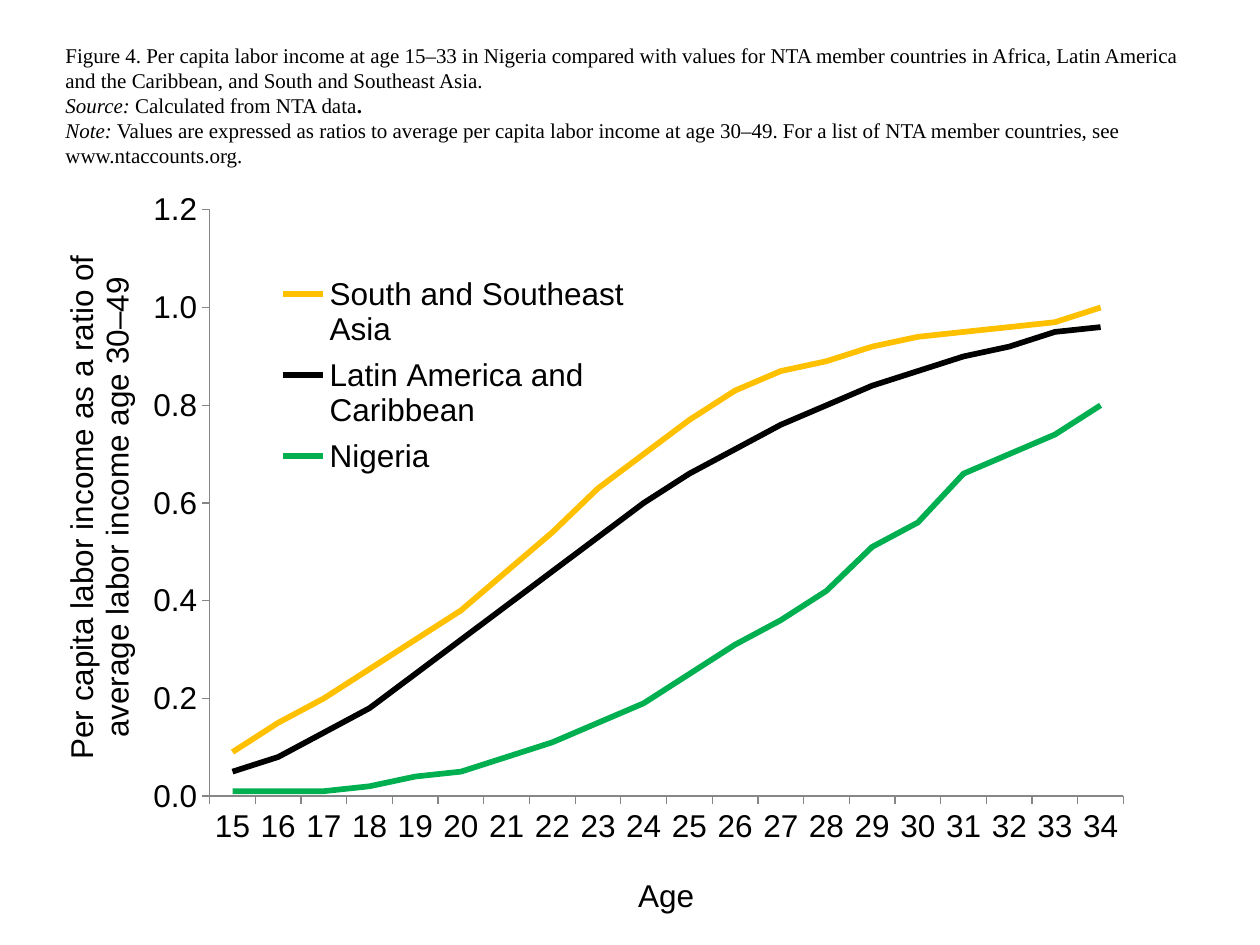
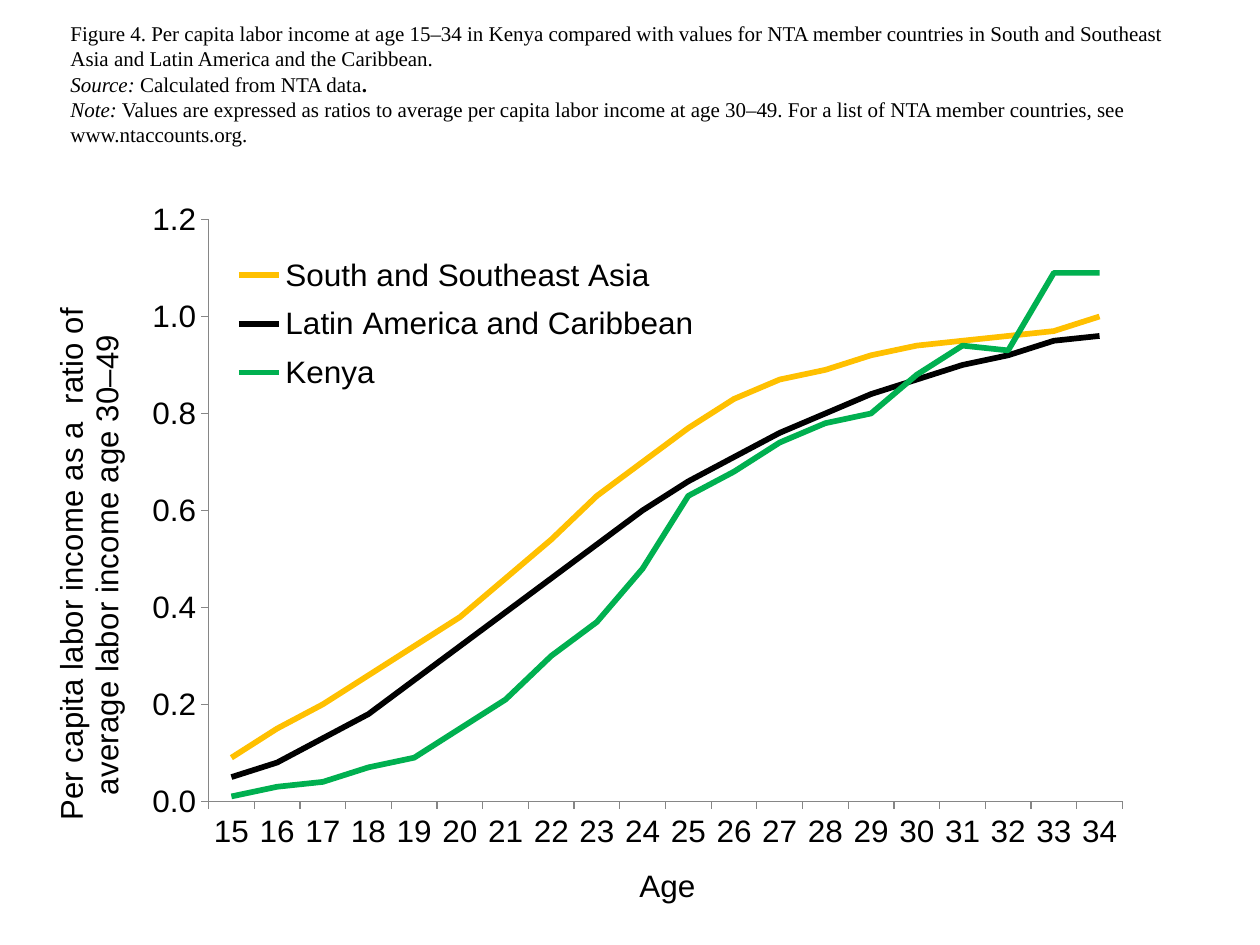
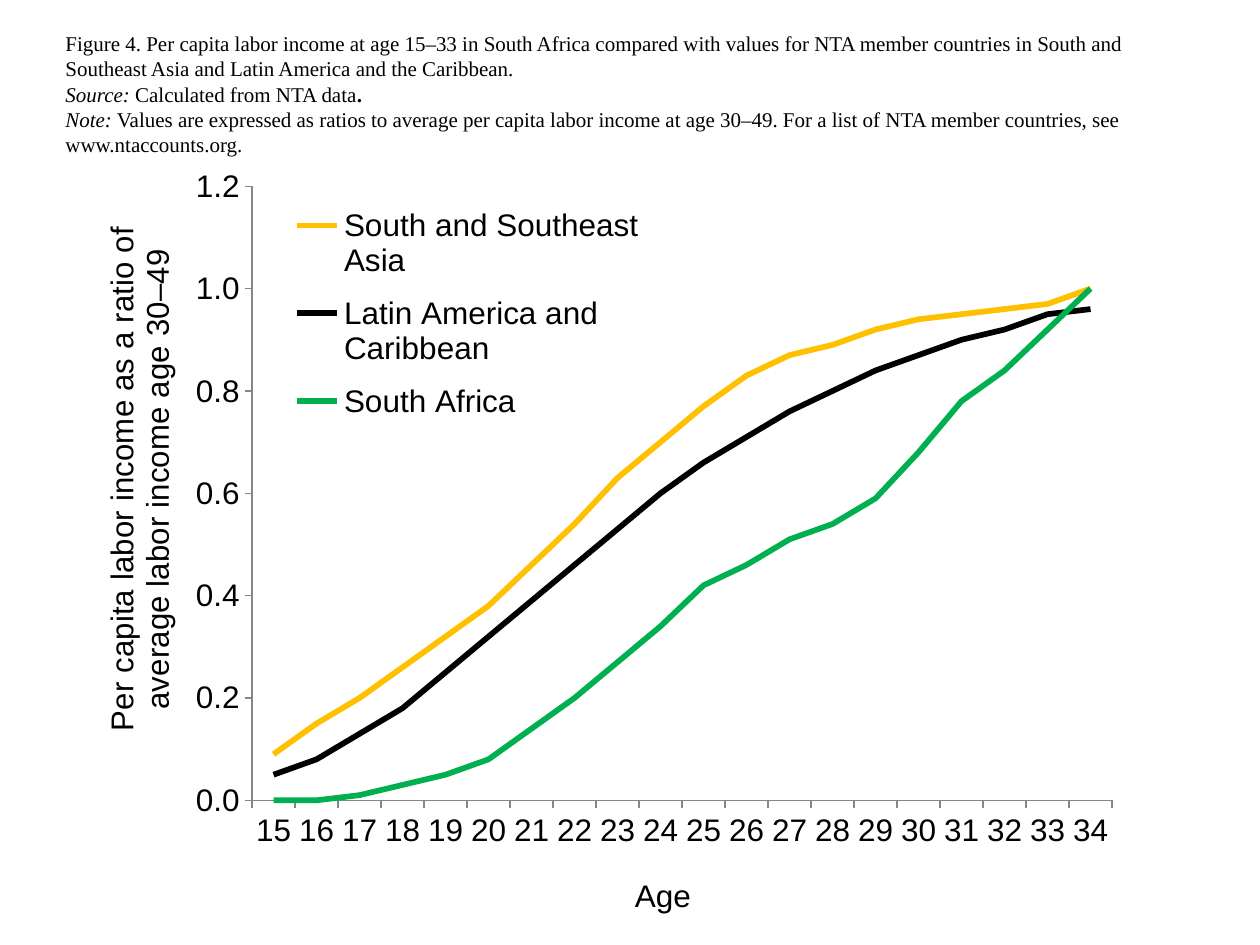
"""Build three slides comparing labor income by age."""
import dataclasses
import typing

import lxml.etree
import pptx
import pptx.chart.axis
import pptx.chart.chart
import pptx.chart.data
import pptx.dml.color
import pptx.enum.chart
import pptx.enum.text
import pptx.oxml.ns
import pptx.slide
import pptx.util

Cm = pptx.util.Cm
Pt = pptx.util.Pt
RGBColor = pptx.dml.color.RGBColor
qn = pptx.oxml.ns.qn

BLACK = RGBColor(0x00, 0x00, 0x00)
GOLD = RGBColor(0xFF, 0xC0, 0x00)
GREEN = RGBColor(0x00, 0xB0, 0x50)
GRAY = RGBColor(0x86, 0x86, 0x86)

SERIF = {"name": "Times New Roman", "size": Pt(12), "bold": False, "italic": False}
SANS = {"name": "Arial", "size": Pt(18), "bold": False}
FRAME = {
    "word_wrap": True,
    "vertical_anchor": pptx.enum.text.MSO_ANCHOR.MIDDLE,
}
AXIS = {
    "has_major_gridlines": False,
    "major_tick_mark": pptx.enum.chart.XL_TICK_MARK.OUTSIDE,
    "minor_tick_mark": pptx.enum.chart.XL_TICK_MARK.NONE,
}
SCALE = {"minimum_scale": 0, "maximum_scale": 1.2, "major_unit": 0.2}
LABELS = {"number_format": "#,##0.0", "number_format_is_linked": False}
LEGEND = {
    "position": pptx.enum.chart.XL_LEGEND_POSITION.TOP,
    "include_in_layout": False,
}

AGES = [str(age) for age in range(15, 35)]
ASIA = [0.09, 0.15, 0.2, 0.26, 0.32, 0.38, 0.46, 0.54, 0.63, 0.7,
        0.77, 0.83, 0.87, 0.89, 0.92, 0.94, 0.95, 0.96, 0.97, 1]
LATIN = [0.05, 0.08, 0.13, 0.18, 0.25, 0.32, 0.39, 0.46, 0.53, 0.6,
         0.66, 0.71, 0.76, 0.8, 0.84, 0.87, 0.9, 0.92, 0.95, 0.96]
NOTES = [
    [("Source:", {"italic": True}), (" Calculated from NTA data", {}), (".", {"bold": True})],
    [("Note:", {"italic": True}),
     (" Values are expressed as ratios to average per capita labor income at age 30–49. "
      "For a list of NTA member countries, see www.ntaccounts.org.", {})],
]


@dataclasses.dataclass(frozen=True)
class Figure:
    """One country's slide: boxes in cm, chart parts as shares of the chart."""

    land: str
    ages: str
    peers: str
    head: tuple[float, float]
    box: tuple[float, float, float, float]
    plot: tuple[float, ...]
    key: tuple[float, ...]
    side: tuple[float, ...]
    foot: tuple[float, ...]
    vals: list[float]
    ratio: str = "a ratio"


FIGURES = [
    Figure("Nigeria", "15–33", "Africa, Latin America and the Caribbean, and South and Southeast Asia",
           (1.07, 0.43), (0.64, 3.38, 23.29, 15.24), (0.154, 0.056, 0.791, 0.777),
           (0.2, 0.13, 0.33, 0.29), (0.02, 0.11), (0.52, 0.93),
           [0.01, 0.01, 0.01, 0.02, 0.04, 0.05, 0.08, 0.11, 0.15, 0.19,
            0.25, 0.31, 0.36, 0.42, 0.51, 0.56, 0.66, 0.7, 0.74, 0.8]),
    Figure("Kenya", "15–34", "South and Southeast Asia and Latin America and the Caribbean",
           (1.17, 0), (0.2, 3.61, 23.29, 14.81), (0.172, 0.056, 0.791, 0.803),
           (0.18, 0.09, 0.43, 0.22), (0.03, 0.18), (0.54, 0.94),
           [0.01, 0.03, 0.04, 0.07, 0.09, 0.15, 0.21, 0.3, 0.37, 0.48,
            0.63, 0.68, 0.74, 0.78, 0.8, 0.88, 0.94, 0.93, 1.09, 1.09],
           "a  ratio"),
    Figure("South Africa", "15–33", "South and Southeast Asia and Latin America and the Caribbean",
           (1.07, 0.2), (1.47, 3.38, 22.43, 15.24), (0.161, 0.025, 0.773, 0.822),
           (0.19, 0.03, 0.33, 0.33), (0.02, 0.08), (0.5, 0.94),
           [0, 0, 0.01, 0.03, 0.05, 0.08, 0.14, 0.2, 0.27, 0.34,
            0.42, 0.46, 0.51, 0.54, 0.59, 0.68, 0.78, 0.84, 0.92, 1]),
]


def style(item: typing.Any, looks: dict[str, typing.Any]) -> None:
    """Set each format value on the item."""
    for name, value in looks.items():
        setattr(item, name, value)


def ink(font: typing.Any, looks: dict[str, typing.Any]) -> None:
    """Give a font its looks in black."""
    style(font, looks)
    font.color.rgb = BLACK


def place(node: typing.Any, spot: tuple[float, ...], after: str = "") -> None:
    """Fix a chart part at its share of the chart, after the named child."""
    for old in node.findall(qn("c:layout")):
        node.remove(old)
    layout = lxml.etree.Element(qn("c:layout"))
    manual = lxml.etree.SubElement(layout, qn("c:manualLayout"))
    pairs = [("xMode", "edge"), ("yMode", "edge"), *zip("xywh", spot)]
    if not after:
        pairs.insert(0, ("layoutTarget", "inner"))
    for tag, value in pairs:
        lxml.etree.SubElement(manual, qn(f"c:{tag}"), val=str(value))
    if after:
        node.find(qn(after)).addnext(layout)
    else:
        node.insert(0, layout)


def write_head(slide: pptx.slide.Slide, fig: Figure) -> None:
    """Write the caption, its source and its note."""
    left, top = fig.head
    frame = slide.shapes.add_textbox(Cm(left), Cm(top), Cm(23.06), Cm(3.38)).text_frame
    style(frame, FRAME)
    title = (f"Figure 4. Per capita labor income at age {fig.ages} in {fig.land} compared "
             f"with values for NTA member countries in {fig.peers}.")
    for row, parts in enumerate([[(title, {})], *NOTES]):
        para = frame.add_paragraph() if row else frame.paragraphs[0]
        for text, looks in parts:
            run = para.add_run()
            run.text = text
            ink(run.font, SERIF | looks)


def draw_axis(axis: typing.Any, text: str, spot: tuple[float, ...]) -> None:
    """Style an axis and set its title in place."""
    style(axis, AXIS)
    axis.format.line.color.rgb = GRAY
    axis.format.line.width = Pt(0.75)
    title = axis.axis_title
    title.text_frame.text = text
    ink(title.text_frame.paragraphs[0].runs[0].font, SANS)
    place(title._element, spot, "c:tx")


def draw_chart(slide: pptx.slide.Slide, fig: Figure) -> None:
    """Draw the three income curves with axes and legend."""
    data = pptx.chart.data.CategoryChartData()
    data.categories = AGES
    curves = [("South and Southeast Asia", ASIA, GOLD),
              ("Latin America and Caribbean", LATIN, BLACK),
              (fig.land, fig.vals, GREEN)]
    for name, vals, _ in curves:
        data.add_series(name, vals)
    chart = slide.shapes.add_chart(
        pptx.enum.chart.XL_CHART_TYPE.LINE, *map(Cm, fig.box), data).chart
    chart.has_title = False
    ink(chart.font, SANS)
    for line, (_, _, color) in zip(chart.plots[0].series, curves):
        line.smooth = False
        line.format.line.color.rgb = color
        line.format.line.width = Pt(3.25)
    chart.plots[0].vary_by_categories = False
    draw_axis(chart.category_axis, "Age", fig.foot)
    draw_axis(chart.value_axis, f"Per capita labor income as {fig.ratio} of "
              "average labor income age 30–49", fig.side)
    style(chart.value_axis, SCALE)
    style(chart.value_axis.tick_labels, LABELS)
    chart.has_legend = True
    style(chart.legend, LEGEND)
    ink(chart.legend.font, SANS)
    place(chart.legend._element, fig.key, "c:legendPos")
    place(chart._chartSpace.chart.plotArea, fig.plot)


def main() -> None:
    """Build and save the deck."""
    deck = pptx.Presentation()
    style(deck, {"slide_width": Cm(25.4), "slide_height": Cm(19.05)})
    for fig in FIGURES:
        slide = deck.slides.add_slide(deck.slide_layouts[6])
        write_head(slide, fig)
        draw_chart(slide, fig)
    deck.save("out.pptx")


if __name__ == "__main__":
    main()
